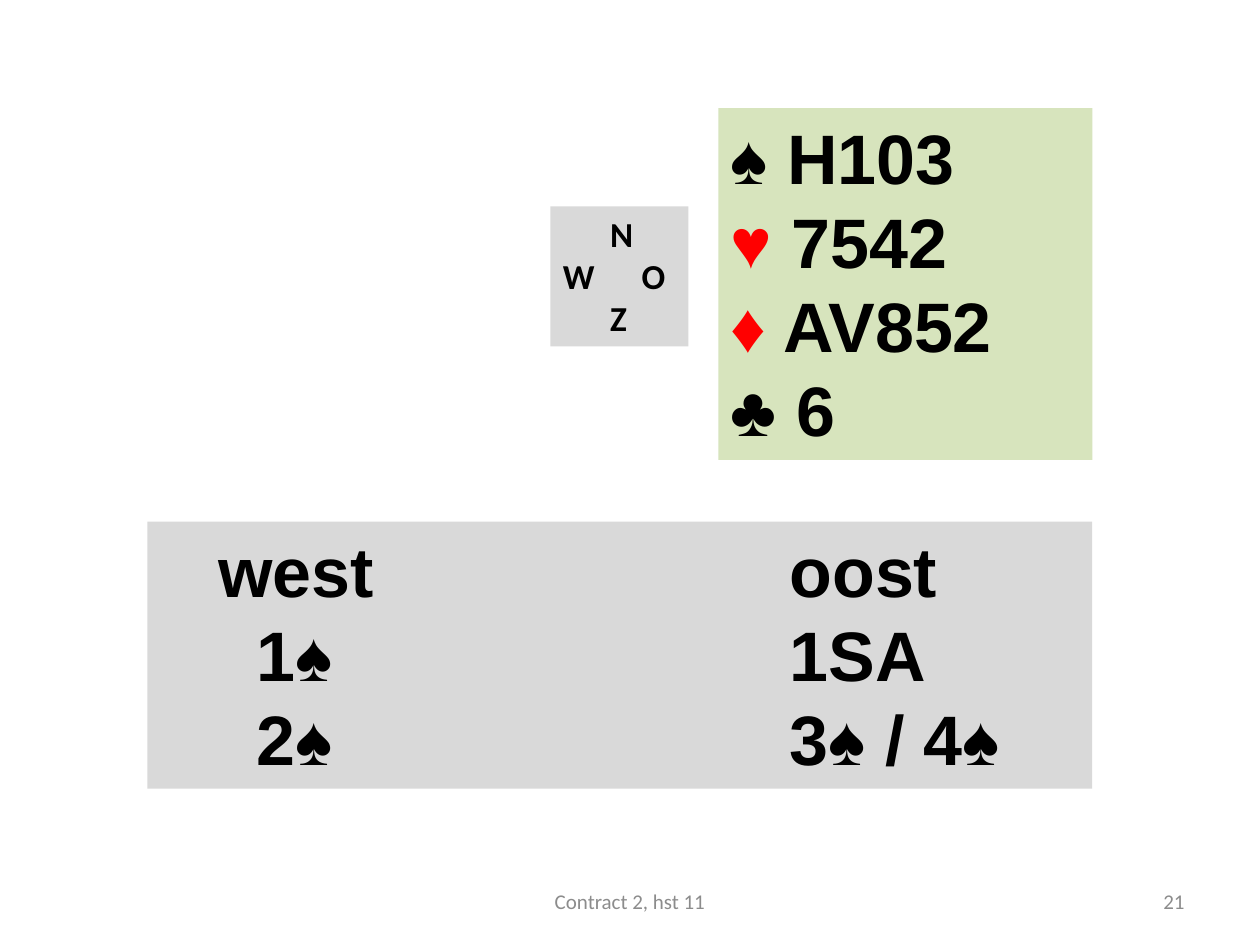
"""Build a bridge bidding slide with a hand, a compass and an auction."""
from dataclasses import dataclass

from lxml import etree
from pptx import Presentation
from pptx.dml.color import RGBColor
from pptx.enum.shapes import MSO_SHAPE
from pptx.enum.text import MSO_ANCHOR, PP_ALIGN
from pptx.oxml.ns import qn
from pptx.util import Pt

RECT = MSO_SHAPE.RECTANGLE
TOP, MIDDLE = MSO_ANCHOR.TOP, MSO_ANCHOR.MIDDLE
LEFT, CENTER, RIGHT = PP_ALIGN.LEFT, PP_ALIGN.CENTER, PP_ALIGN.RIGHT


@dataclass(frozen=True)
class Theme:
    black: RGBColor = RGBColor(0, 0, 0)
    red: RGBColor = RGBColor(255, 0, 0)
    muted: RGBColor = RGBColor(0x8C, 0x8C, 0x8C)
    gray: RGBColor = RGBColor(0xD9, 0xD9, 0xD9)
    green: RGBColor = RGBColor(0xD7, 0xE4, 0xBD)
    card: str = "Arial"
    plain: str = "Calibri"
    large: float = 40
    medium: float = 20
    small: float = 12


THEME = Theme()


@dataclass(frozen=True)
class Panel:
    box: tuple[float, float, float, float]
    fill: RGBColor
    face: str
    size: float
    lines: tuple[str, ...]
    stops: tuple[tuple[float, ...], ...] = ()


@dataclass(frozen=True)
class Footer:
    box: tuple[float, float, float, float]
    text: str
    align: PP_ALIGN


PANELS = (
    Panel((314.6, 118, 78.8, 80), THEME.gray, THEME.plain, THEME.medium,
          ("\tN", "W\tO", "\tZ"), ((27,), (45,), (27,))),
    Panel((84.2, 298, 540, 152.7), THEME.gray, THEME.card, THEME.large,
          ("\twest\toost", "\t1♠\t1SA", "\t2♠\t3♠ / 4♠"),
          ((33.4, 360), (55.6, 360), (55.6, 360))),
    Panel((410.5, 61.8, 213.8, 201), THEME.green, THEME.card, THEME.large,
          ("♠ H103", "♥ 7542", "♦ AV852", "♣ 6")),
)
FOOTERS = (
    Footer((516, 500.5, 168, 28.8), "21", RIGHT),
    Footer((246, 500.5, 228, 28.8), "Contract 2, hst 11", CENTER),
)


def set_tabs(para, stops: tuple[float, ...]) -> None:
    """Give a paragraph left tab stops at the given points."""
    tabs = etree.Element(qn("a:tabLst"))
    for stop in stops:
        etree.SubElement(tabs, qn("a:tab"), pos=str(int(Pt(stop))), algn="l")
    para._p.get_or_add_pPr().insert(0, tabs)


def style(para, face: str, size: float, color: RGBColor, bold: bool) -> None:
    """Set the font that all runs of a paragraph share."""
    font = para.font
    font.name, font.size, font.bold = face, Pt(size), bold
    font.color.rgb = color


def add_line(para, text: str) -> None:
    """Write a line, with a leading red suit in its own run."""
    if text[0] in "♥♦":
        suit = para.add_run()
        suit.text = text[0]
        suit.font.color.rgb = THEME.red
        text = text[1:]
    para.add_run().text = text


def draw_panel(slide, panel: Panel) -> None:
    """Draw a filled panel with its lines of text."""
    shape = slide.shapes.add_shape(RECT, *map(Pt, panel.box))
    shape.shadow.inherit = False
    shape.fill.solid()
    shape.fill.fore_color.rgb = panel.fill
    shape.line.fill.background()
    frame = shape.text_frame
    frame.word_wrap = True
    frame.vertical_anchor = TOP
    for i, text in enumerate(panel.lines):
        para = frame.add_paragraph() if i else frame.paragraphs[0]
        para.alignment = LEFT
        if panel.stops:
            set_tabs(para, panel.stops[i])
        style(para, panel.face, panel.size, THEME.black, True)
        add_line(para, text)


def draw_footer(slide, footer: Footer) -> None:
    """Draw one muted footer text."""
    frame = slide.shapes.add_textbox(*map(Pt, footer.box)).text_frame
    frame.word_wrap = True
    frame.vertical_anchor = MIDDLE
    para = frame.paragraphs[0]
    para.alignment = footer.align
    style(para, THEME.plain, THEME.small, THEME.muted, False)
    add_line(para, footer.text)


def main() -> None:
    """Build and save the slide."""
    deck = Presentation()
    deck.slide_width, deck.slide_height = Pt(720), Pt(540)
    slide = deck.slides.add_slide(deck.slide_layouts[6])
    for panel in PANELS:
        draw_panel(slide, panel)
    for footer in FOOTERS:
        draw_footer(slide, footer)
    deck.save("out.pptx")


if __name__ == "__main__":
    main()
